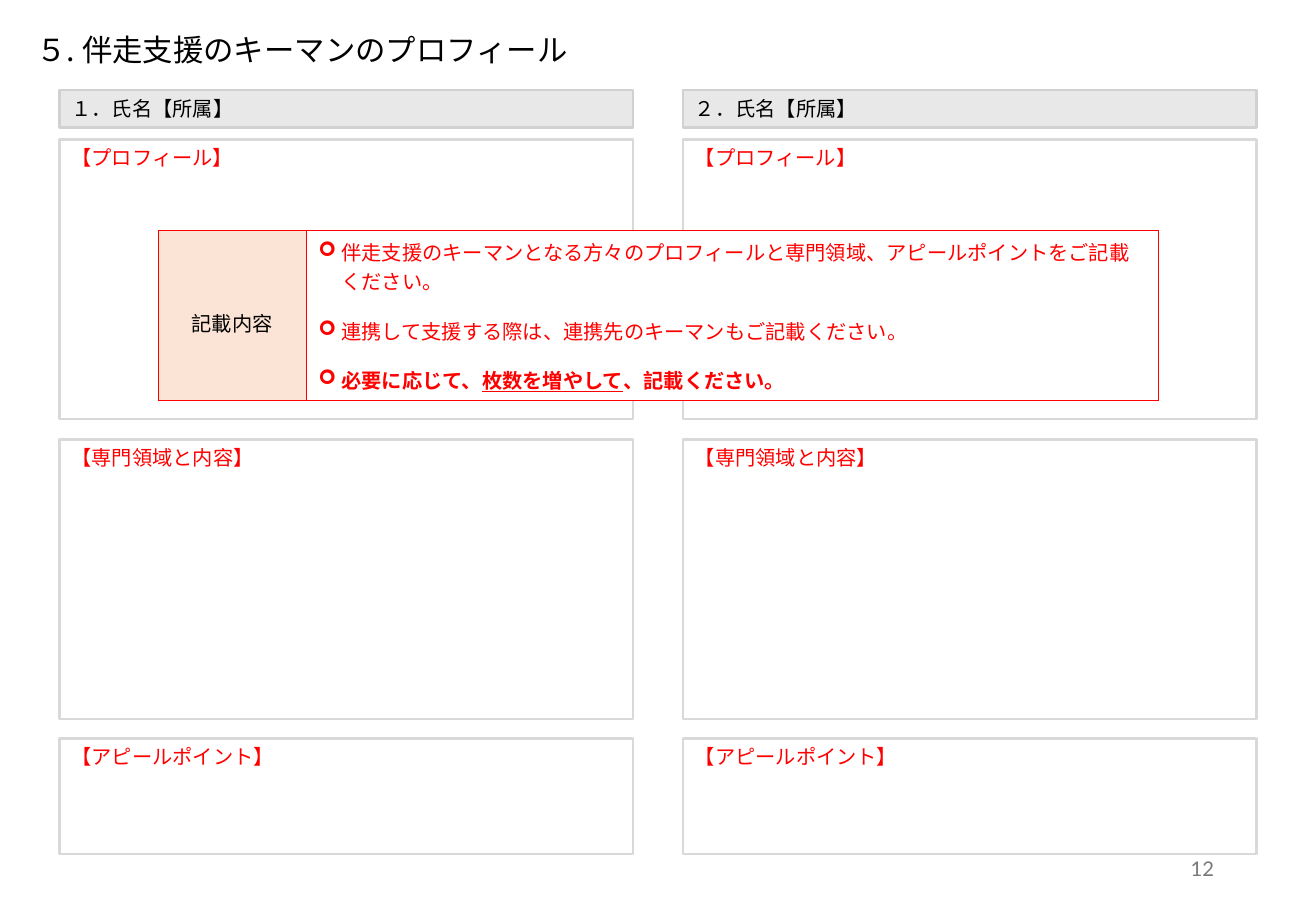
import pptx
import pptx.dml.color
import pptx.enum.shapes
import pptx.enum.text
import pptx.oxml.ns
import pptx.util
from lxml import etree

ALIGN = pptx.enum.text.PP_ALIGN
ANCHOR = pptx.enum.text.MSO_ANCHOR
CJK = "Noto Sans CJK JP"
RED = "FF0000"

LEFT, WIDTH, PITCH = 0.49, 4.72, 5.13
NAMES = ["１．氏名【所属】", "２．氏名【所属】"]
HEAD = (0.74, 0.31)
PARTS = [
    ("【プロフィール】", 1.15, 2.3),
    ("【専門領域と内容】", 3.62, 2.3),
    ("【アピールポイント】", 6.08, 0.95),
]
NOTES = [
    ["伴走支援のキーマンとなる方々のプロフィールと専門領域、アピールポイントをご記載ください。"],
    ["連携して支援する際は、連携先のキーマンもご記載ください。"],
    ["必要に応じて、", "枚数を増やして", "、記載ください。"],
]


def inches(*sizes):
    return [pptx.util.Inches(size) for size in sizes]


def color(code):
    return pptx.dml.color.RGBColor.from_string(code)


def add_xml(parent, tag, **attrs):
    return etree.SubElement(parent, pptx.oxml.ns.qn(tag), attrs)


def style(para, code, size=12, face=CJK, align=ALIGN.LEFT):
    para.alignment = align
    font = para.font
    font.size = pptx.util.Pt(size)
    font.name = face
    font.color.rgb = color(code)
    props = para._p.get_or_add_pPr().find(pptx.oxml.ns.qn("a:defRPr"))
    add_xml(props, "a:ea", typeface=face)


def add_title(slide, text):
    title = slide.shapes.title
    title.left, title.top, title.width, title.height = inches(0.2, 0.24, 10.43, 0.39)
    frame = title.text_frame
    frame.text = text
    frame.auto_size = pptx.enum.text.MSO_AUTO_SIZE.NONE
    frame.vertical_anchor = ANCHOR.TOP
    para = frame.paragraphs[0]
    para.line_spacing = 0.9
    style(para, "000000", 18)


def add_number(slide, text):
    frame = slide.shapes.add_textbox(*inches(7.65, 6.95, 2.44, 0.4)).text_frame
    frame.word_wrap = True
    frame.vertical_anchor = ANCHOR.MIDDLE
    frame.text = text
    style(frame.paragraphs[0], "797979", face="Lato", align=ALIGN.RIGHT)


def add_box(slide, column, top, height, text, ink, edge, fill=None):
    box = slide.shapes.add_shape(
        pptx.enum.shapes.MSO_SHAPE.RECTANGLE,
        *inches(LEFT + column * PITCH, top, WIDTH, height))
    box.shadow.inherit = False
    if fill:
        box.fill.solid()
        box.fill.fore_color.rgb = color(fill)
    else:
        box.fill.background()
    box.line.color.rgb = color(edge)
    box.line.width = pptx.util.Pt(1.5)
    frame = box.text_frame
    frame.word_wrap = True
    frame.vertical_anchor = ANCHOR.MIDDLE if fill else ANCHOR.TOP
    frame.text = text
    style(frame.paragraphs[0], ink)


def format_cell(cell, fill):
    """Border the cell in red, then fill it."""
    cell.vertical_anchor = ANCHOR.MIDDLE
    props = cell._tc.get_or_add_tcPr()
    for side in ("a:lnL", "a:lnR", "a:lnT", "a:lnB"):
        line = add_xml(props, side, w=str(pptx.util.Pt(0.5)))
        add_xml(add_xml(line, "a:solidFill"), "a:srgbClr", val=RED)
    cell.fill.solid()
    cell.fill.fore_color.rgb = color(fill)


def add_bullet(para):
    indent = pptx.util.Inches(0.19)
    props = para._p.get_or_add_pPr()
    props.set("marL", str(indent))
    props.set("indent", str(-indent))
    para.space_after = pptx.util.Pt(12)
    add_xml(props, "a:buFont", typeface="Wingdings")
    add_xml(props, "a:buChar", char="➢")


def add_guide(slide):
    table = slide.shapes.add_table(1, 2, *inches(1.3, 1.9, 8.23, 1.4)).table
    table.columns[0].width, table.columns[1].width = inches(1.22, 7.01)
    label, notes = table.cell(0, 0), table.cell(0, 1)
    table.first_row = table.horz_banding = False
    format_cell(label, "FBE3D6")
    format_cell(notes, "FFFFFF")
    label.text = "記載内容"
    para = label.text_frame.paragraphs[0]
    para.line_spacing = 1.5
    style(para, "000000", align=ALIGN.CENTER)

    frame = notes.text_frame
    for index, texts in enumerate(NOTES):
        para = frame.add_paragraph() if index else frame.paragraphs[0]
        add_bullet(para)
        style(para, RED)
        for text in texts:
            para.add_run().text = text
    para.font.bold = True
    para.runs[1].font.underline = True


def main():
    deck = pptx.Presentation()
    deck.slide_width, deck.slide_height = inches(10.83, 7.5)
    slide = deck.slides.add_slide(deck.slide_layouts[5])
    add_title(slide, "５. 伴走支援のキーマンのプロフィール")
    add_number(slide, "12")
    for column, name in enumerate(NAMES):
        add_box(slide, column, *HEAD, name, "000000", "D1D1D1", "E8E8E8")
        for text, top, height in PARTS:
            add_box(slide, column, top, height, text, RED, "D9D9D9")
    add_guide(slide)
    deck.save("out.pptx")


if __name__ == "__main__":
    main()
